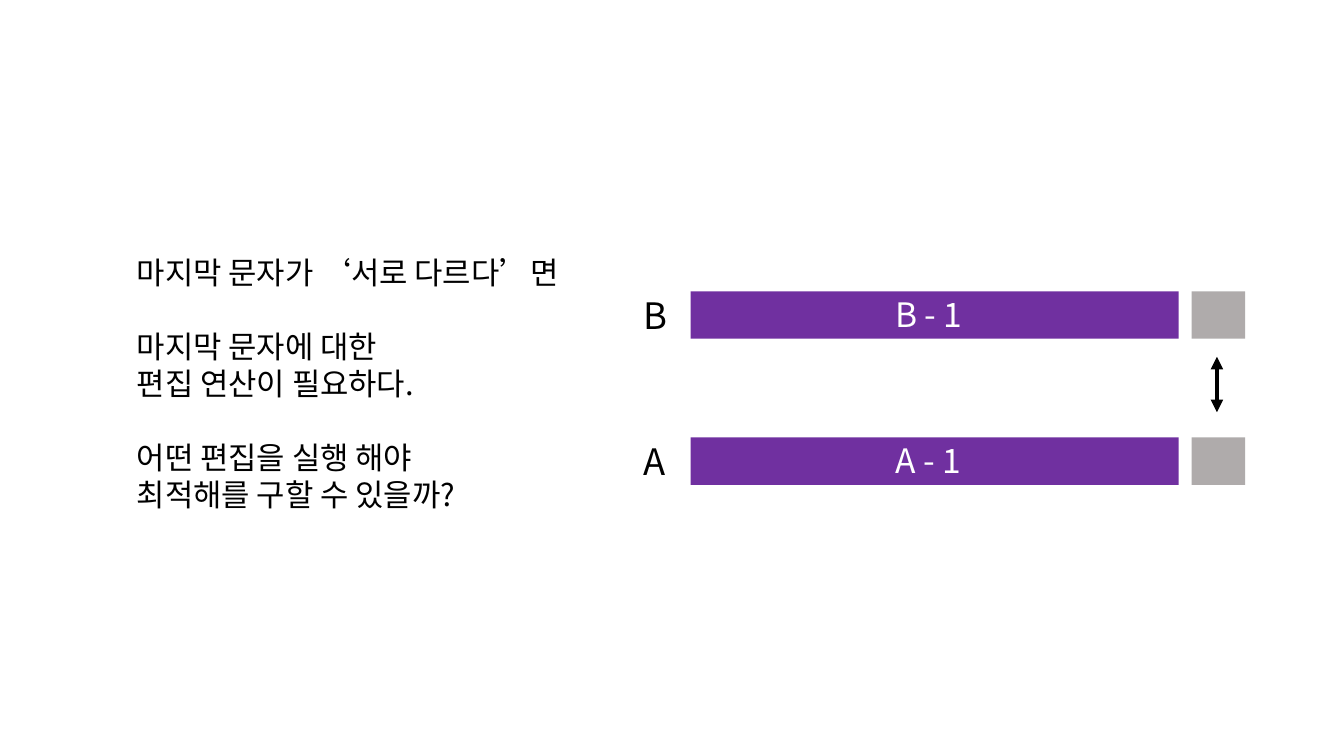
from pptx import Presentation
from pptx.dml.color import RGBColor
from pptx.enum.shapes import MSO_CONNECTOR as Connector, MSO_SHAPE as Shape
from pptx.enum.text import MSO_AUTO_SIZE as AutoSize
from pptx.oxml.ns import qn
from pptx.util import Pt
from lxml.etree import SubElement

PX = 9144
FONT = "Noto Sans CJK KR"
BLACK, WHITE, PURPLE, GRAY = "000000", "FFFFFF", "7030A0", "AFABAB"
BAR_HEIGHT = 47
QUESTION_SIZE = 22
GROUP_GAP = 26.5
QUESTION = [
    ["마지막 문자가 ‘서로 다르다’면"],
    ["마지막 문자에 대한", "편집 연산이 필요하다."],
    ["어떤 편집을 실행 해야", "최적해를 구할 수 있을까?"],
]


def px(*lengths):
    """Turn pixel lengths into EMU."""
    return [length * PX for length in lengths]


def color(code):
    """Turn a hex string into a colour."""
    return RGBColor.from_string(code)


def style_run(run, size, code):
    """Set the size, colour and both typefaces of a run."""
    run.font.size = Pt(size)
    run.font.color.rgb = color(code)
    run.font.name = FONT
    SubElement(run.font._element, qn("a:ea")).set("typeface", FONT)


def add_text(page, box, groups, size, code):
    """Write groups of lines into a text box, with a gap before each later group."""
    frame = page.shapes.add_textbox(*px(*box)).text_frame
    frame.word_wrap = True
    frame.auto_size = AutoSize.SHAPE_TO_FIT_TEXT
    frame.text = "\n".join(line for group in groups for line in group)
    for para in frame.paragraphs:
        style_run(para.runs[0], size, code)
    start = 0
    for group in groups[:-1]:
        start += len(group)
        frame.paragraphs[start].space_before = Pt(GROUP_GAP)


def add_block(page, box, code):
    """Draw a plain filled rectangle."""
    block = page.shapes.add_shape(Shape.RECTANGLE, *px(*box))
    block.shadow.inherit = False
    block.fill.solid()
    block.fill.fore_color.rgb = color(code)
    block.line.fill.background()


def add_string_row(page, left, top, letter):
    """Draw one string: its letter, its prefix bar and its last character."""
    add_block(page, (left + 57, top, 484, BAR_HEIGHT), PURPLE)
    add_block(page, (left + 554, top, 53, BAR_HEIGHT), GRAY)
    add_text(page, (left, top - 3, 45, 54), [[letter]], 26, BLACK)
    add_text(page, (left + 250, top - 2, 99, 50), [[f"{letter} - 1"]], 24, WHITE)


def add_double_arrow(page, x, top, bottom):
    """Draw a vertical arrow with a head at each end."""
    arrow = page.shapes.add_connector(Connector.STRAIGHT, *px(x, top, x, bottom))
    arrow.line.color.rgb = color(BLACK)
    arrow.line.width = Pt(3)
    outline = arrow.line._get_or_add_ln()
    for end in ("a:headEnd", "a:tailEnd"):
        SubElement(outline, qn(end)).set("type", "triangle")
    SubElement(arrow._element.spPr, qn("a:effectLst"))


def add_comparison(page, left, top, pitch):
    """Stack strings B and A and join their last characters."""
    for row, letter in enumerate("BA"):
        add_string_row(page, left, top + row * pitch, letter)
    add_double_arrow(page, left + 579, top + 65, top + 120)


def main():
    """Build the slide and save it."""
    deck = Presentation()
    deck.slide_width, deck.slide_height = px(1333, 750)
    page = deck.slides.add_slide(deck.slide_layouts[6])
    add_text(page, (126, 247, 453, 269), QUESTION, QUESTION_SIZE, BLACK)
    add_comparison(page, 628, 289, 145)
    deck.save("out.pptx")


if __name__ == "__main__":
    main()
